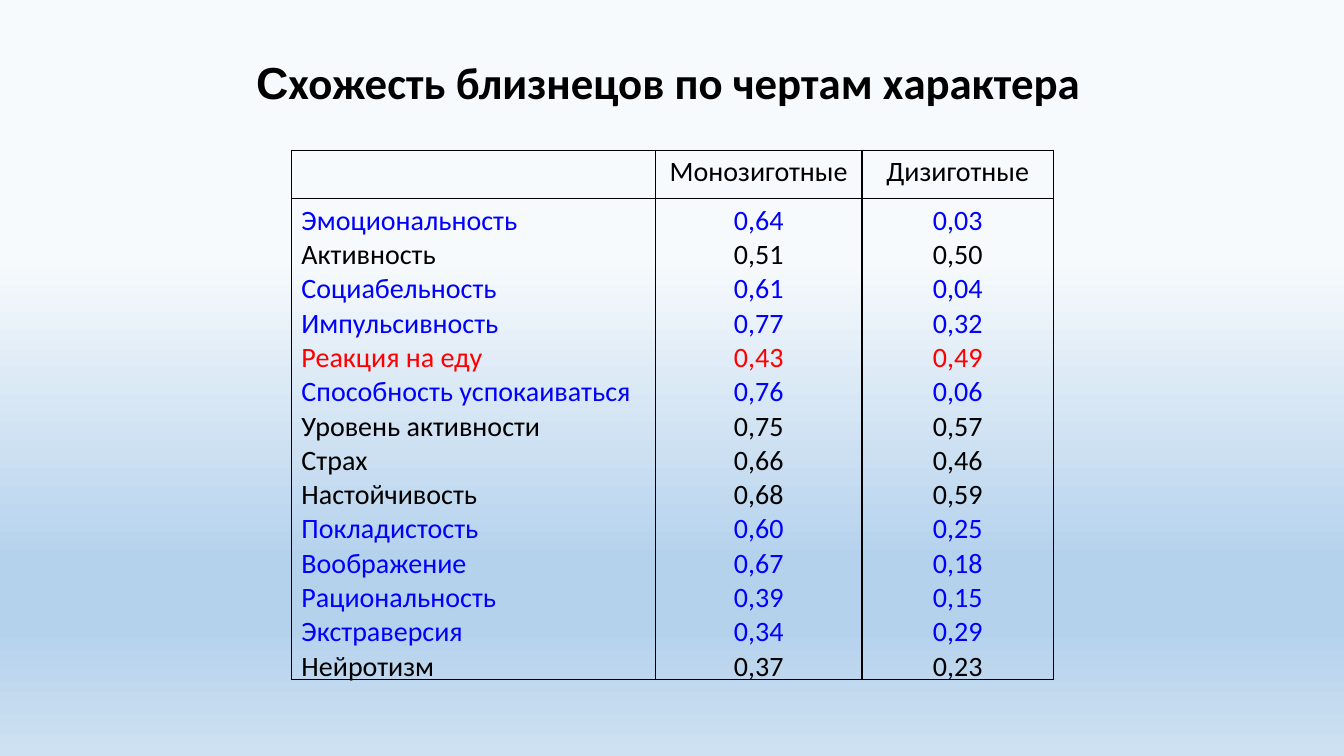
from typing import NamedTuple

from pptx import Presentation
from pptx import util as u
from pptx.dml.color import RGBColor
from pptx.enum import text as t
from pptx.oxml import ns, xmlchemy as xml

BLACK = RGBColor(0x00, 0x00, 0x00)
BLUE = RGBColor(0x00, 0x00, 0xFF)
RED = RGBColor(0xFF, 0x00, 0x00)
PALE = RGBColor(0xF7, 0xFA, 0xFD)
SKY = RGBColor(0xB5, 0xD2, 0xEC)
MIST = RGBColor(0xCE, 0xE1, 0xF2)


class Stop(NamedTuple):
    place: int
    color: RGBColor


class Trait(NamedTuple):
    name: str
    mono: str
    di: str
    color: RGBColor


STOPS = [Stop(34, PALE), Stop(74, SKY), Stop(83, SKY), Stop(100, MIST)]
HEADS = ["", "Монозиготные", "Дизиготные"]
WIDTHS = [3.61, 2.05, 1.9]
HEIGHTS = [0.48, 4.77]
TRAITS = [
    Trait("Эмоциональность", "0,64", "0,03", BLUE),
    Trait("Активность", "0,51", "0,50", BLACK),
    Trait("Социабельность", "0,61", "0,04", BLUE),
    Trait("Импульсивность", "0,77", "0,32", BLUE),
    Trait("Реакция на еду", "0,43", "0,49", RED),
    Trait("Способность успокаиваться", "0,76", "0,06", BLUE),
    Trait("Уровень активности", "0,75", "0,57", BLACK),
    Trait("Страх", "0,66", "0,46", BLACK),
    Trait("Настойчивость", "0,68", "0,59", BLACK),
    Trait("Покладистость", "0,60", "0,25", BLUE),
    Trait("Воображение", "0,67", "0,18", BLUE),
    Trait("Рациональность", "0,39", "0,15", BLUE),
    Trait("Экстраверсия", "0,34", "0,29", BLUE),
    Trait("Нейротизм", "0,37", "0,23", BLACK),
]


def add_node(base, tag: str, **attrs: str):
    node = xml.OxmlElement(tag)
    for key, value in attrs.items():
        node.set(key, value)
    base.append(node)
    return node


def paint_back(slide) -> None:
    fill = slide.background.fill
    fill.gradient()
    fill.gradient_angle = 270
    stops = next(slide.element.iter(ns.qn("a:gsLst")))
    for old in list(stops):
        stops.remove(old)
    for stop in STOPS:
        node = add_node(stops, "a:gs", pos=str(stop.place * 1000))
        add_node(node, "a:srgbClr", val=str(stop.color))


def style_run(run, size: int, color: RGBColor, face: str = "Calibri", bold: bool = False) -> None:
    run.font.name = face
    run.font.size = u.Pt(size)
    run.font.bold = bold
    run.font.color.rgb = color


def set_title(slide) -> None:
    title = slide.shapes.title
    title.left, title.top = u.Inches(2.3), u.Inches(0.49)
    title.width, title.height = u.Inches(8.66), u.Inches(0.63)
    frame = title.text_frame
    frame.word_wrap = True
    frame.auto_size = t.MSO_AUTO_SIZE.SHAPE_TO_FIT_TEXT
    frame.vertical_anchor = t.MSO_ANCHOR.TOP
    line = frame.paragraphs[0]
    line.alignment = t.PP_ALIGN.CENTER
    for words, face in [("С", "Arial"), ("хожесть близнецов по чертам характера", "Calibri")]:
        run = line.add_run()
        run.text = words
        style_run(run, 32, BLACK, face, True)


def draw_edges(cell) -> None:
    props = cell._tc.get_or_add_tcPr()
    for spot, side in enumerate("LRTB"):
        edge = xml.OxmlElement(f"a:ln{side}")
        edge.set("w", str(u.Pt(1)))
        add_node(add_node(edge, "a:solidFill"), "a:srgbClr", val=str(BLACK))
        props.insert(spot, edge)


def fill_cell(cell, lines: list[str], colors: list[RGBColor], align: t.PP_ALIGN) -> None:
    cell.fill.background()
    draw_edges(cell)
    cell.text_frame.text = "\n".join(lines)
    for line, color in zip(cell.text_frame.paragraphs, colors):
        line.alignment = align
        for run in line.runs:
            style_run(run, 20, color)


def add_grid(slide) -> None:
    frame = slide.shapes.add_table(
        len(HEIGHTS), len(WIDTHS), u.Inches(2.89), u.Inches(1.49),
        u.Inches(sum(WIDTHS)), u.Inches(sum(HEIGHTS)),
    )
    table = frame.table
    table.first_row = False
    table.horz_banding = False
    for row, height in zip(table.rows, HEIGHTS):
        row.height = u.Inches(height)
    names, monos, dis, colors = map(list, zip(*TRAITS))
    for col, (head, lines) in enumerate(zip(HEADS, [names, monos, dis])):
        table.columns[col].width = u.Inches(WIDTHS[col])
        align = t.PP_ALIGN.CENTER if col else t.PP_ALIGN.LEFT
        fill_cell(table.cell(0, col), [head], [BLACK], align)
        fill_cell(table.cell(1, col), lines, colors, align)


def main() -> None:
    deck = Presentation()
    deck.slide_width, deck.slide_height = u.Inches(13.33), u.Inches(7.5)
    slide = deck.slides.add_slide(deck.slide_layouts[5])
    paint_back(slide)
    add_grid(slide)
    set_title(slide)
    deck.save("out.pptx")


if __name__ == "__main__":
    main()
